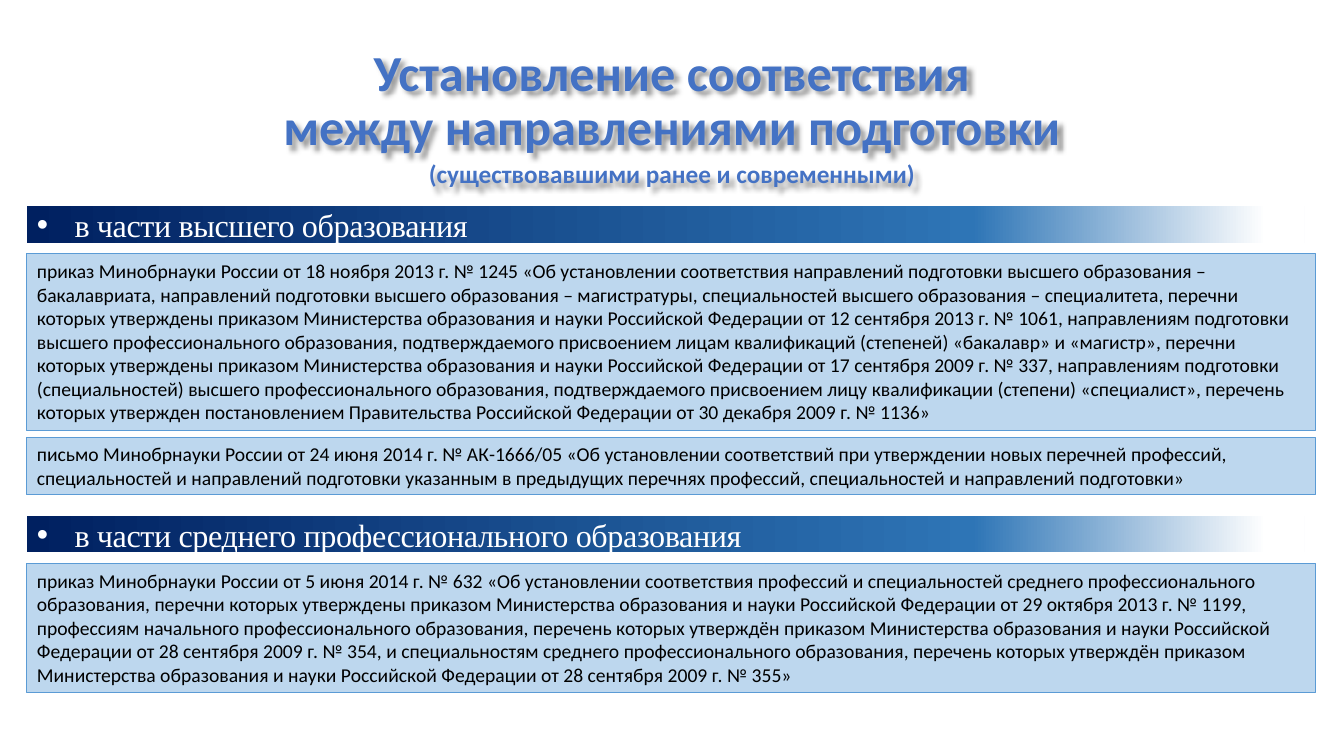
import lxml.etree
import pptx
import pptx.dml.color
import pptx.enum.dml
import pptx.enum.shapes
import pptx.enum.text
import pptx.oxml.ns
import pptx.util

Cm = pptx.util.Cm
Pt = pptx.util.Pt
qn = pptx.oxml.ns.qn
SubElement = lxml.etree.SubElement

TITLE_LINES = ["Установление соответствия", "между направлениями подготовки"]
SUBTITLE = "(существовавшими ранее и современными)"

SECTIONS = [
    {
        "heading": "в части высшего образования",
        "top": 5.2,
        "documents": [
            (4.45, [
                "приказ Минобрнауки России от 18 ноября 2013 г. № 1245 «Об установлении соответствия "
                "направлений подготовки высшего образования – бакалавриата, направлений подготовки высшего "
                "образования – магистратуры, специальностей высшего образования – специалитета, перечни "
                "которых утверждены приказом Министерства образования и науки Российской Федерации от "
                "12 сентября 2013 г. № 1061, ",
                "направлениям подготовки высшего профессионального образования, "
                "подтверждаемого присвоением лицам квалификаций (степеней) «бакалавр» и «магистр», перечни "
                "которых утверждены приказом Министерства образования и науки Российской Федерации от "
                "17 сентября 2009 г. № 337, ",
                "направлениям подготовки (специальностей) высшего "
                "профессионального образования, подтверждаемого присвоением лицу квалификации (степени) "
                "«специалист», перечень которых утвержден постановлением Правительства Российской Федерации "
                "от 30 декабря 2009 г. № 1136»",
            ]),
            (1.45, [
                "письмо Минобрнауки России от 24 июня 2014 г. № АК-1666/05 «Об установлении соответствий "
                "при утверждении новых перечней профессий, специальностей и направлений подготовки указанным "
                "в предыдущих перечнях профессий, специальностей и направлений подготовки»",
            ]),
        ],
    },
    {
        "heading": "в части среднего профессионального образования",
        "top": 13.0,
        "documents": [
            (3.25, [
                "приказ Минобрнауки России от 5 июня 2014 г. № 632 «Об установлении соответствия профессий "
                "и специальностей среднего профессионального образования, перечни которых утверждены приказом "
                "Министерства образования и науки Российской Федерации от 29 октября 2013 г. № 1199, ",
                "профессиям начального профессионального образования, перечень которых утверждён приказом "
                "Министерства образования и науки Российской Федерации от 28 сентября 2009 г. № 354, ",
                "и специальностям среднего профессионального образования, перечень которых утверждён приказом "
                "Министерства образования и науки Российской Федерации от 28 сентября 2009 г. № 355»",
            ]),
        ],
    },
]

THEME = {
    "title": ("Calibri", 36, "4472C4"),
    "subtitle": ("Calibri", 18, "4472C4"),
    "heading": ("Times New Roman", 23, "FFFFFF"),
    "document": ("Calibri", 14, "000000"),
    "box_fill": "BDD7EE",
    "box_line": "5B9BD5",
    "band_stops": [(0, "002060"), (74, "2E75B6"), (97, "FFFFFF")],
    "shadow": "000000",
}

LEFT = 0.68
BAND_WIDTH, BAND_HEIGHT = 32.2, 0.92
BOX_WIDTH = 32.48
BAND_GAP, BOX_GAP = 0.28, 0.17


def rgb(value):
    return pptx.dml.color.RGBColor.from_string(value)


def add_span(para, text, style, bold=False):
    span = para.add_run()
    span.text = text
    name, size, color = THEME[style]
    span.font.name = name
    span.font.size = Pt(size)
    span.font.bold = bold
    span.font.color.rgb = rgb(color)
    return span


def add_rectangle(page, top, width, height):
    box = page.shapes.add_shape(pptx.enum.shapes.MSO_SHAPE.RECTANGLE,
                                Cm(LEFT), Cm(top), Cm(width), Cm(height))
    box.shadow.inherit = False
    box.text_frame.word_wrap = True
    para = box.text_frame.paragraphs[0]
    para.alignment = pptx.enum.text.PP_ALIGN.LEFT
    return box, para


def add_title(page):
    box = page.shapes.add_textbox(Cm(0.3), Cm(1.04), Cm(33.27), Cm(3.89))
    frame = box.text_frame
    frame.word_wrap = True
    frame.vertical_anchor = pptx.enum.text.MSO_ANCHOR.MIDDLE
    lines = [(text, "title") for text in TITLE_LINES] + [(SUBTITLE, "subtitle")]
    for index, (text, style) in enumerate(lines):
        para = frame.add_paragraph() if index else frame.paragraphs[0]
        para.alignment = pptx.enum.text.PP_ALIGN.CENTER
        para.line_spacing = 0.9
        para.space_before = Pt(4 if style == "subtitle" else 0)
        add_span(para, text, style, bold=True)
    effects = SubElement(box._element.spPr, qn("a:effectLst"))
    shadow = SubElement(effects, qn("a:outerShdw"), blurRad=str(Pt(4)), dist=str(Pt(4)),
                        dir="2700000", algn="tl", rotWithShape="0")
    color = SubElement(shadow, qn("a:srgbClr"), val=THEME["shadow"])
    SubElement(color, qn("a:alpha"), val="40000")


def add_band(page, top, heading):
    band, para = add_rectangle(page, top, BAND_WIDTH, BAND_HEIGHT)
    band.line.fill.background()
    band.fill.gradient()
    band.fill.gradient_angle = 0
    stops = band._element.spPr.find(qn("a:gradFill")).find(qn("a:gsLst"))
    for stop in list(stops):
        stops.remove(stop)
    for percent, color in THEME["band_stops"]:
        stop = SubElement(stops, qn("a:gs"), pos=str(percent * 1000))
        SubElement(stop, qn("a:srgbClr"), val=color)
    band.text_frame.vertical_anchor = pptx.enum.text.MSO_ANCHOR.MIDDLE
    settings = para._p.get_or_add_pPr()
    indent = Cm(0.95)
    settings.set("marL", str(indent))
    settings.set("indent", str(-indent))
    SubElement(settings, qn("a:buFont"), typeface="Arial")
    SubElement(settings, qn("a:buChar"), char="•")
    span = add_span(para, heading, "heading")
    span._r.get_or_add_rPr().set("spc", "-30")


def add_document(page, top, height, parts):
    box, para = add_rectangle(page, top, BOX_WIDTH, height)
    box.fill.solid()
    box.fill.fore_color.rgb = rgb(THEME["box_fill"])
    box.line.color.rgb = rgb(THEME["box_line"])
    box.line.width = Pt(0.75)
    box.text_frame.vertical_anchor = pptx.enum.text.MSO_ANCHOR.TOP
    box.text_frame.auto_size = pptx.enum.text.MSO_AUTO_SIZE.SHAPE_TO_FIT_TEXT
    for text in parts:
        add_span(para, text, "document")


def main():
    deck = pptx.Presentation()
    deck.slide_width, deck.slide_height = Cm(33.87), Cm(19.05)
    page = deck.slides.add_slide(deck.slide_layouts[6])
    add_title(page)
    for section in SECTIONS:
        add_band(page, section["top"], section["heading"])
        top = section["top"] + BAND_HEIGHT + BAND_GAP
        for height, parts in section["documents"]:
            add_document(page, top, height, parts)
            top += height + BOX_GAP
    deck.save("out.pptx")


if __name__ == "__main__":
    main()
